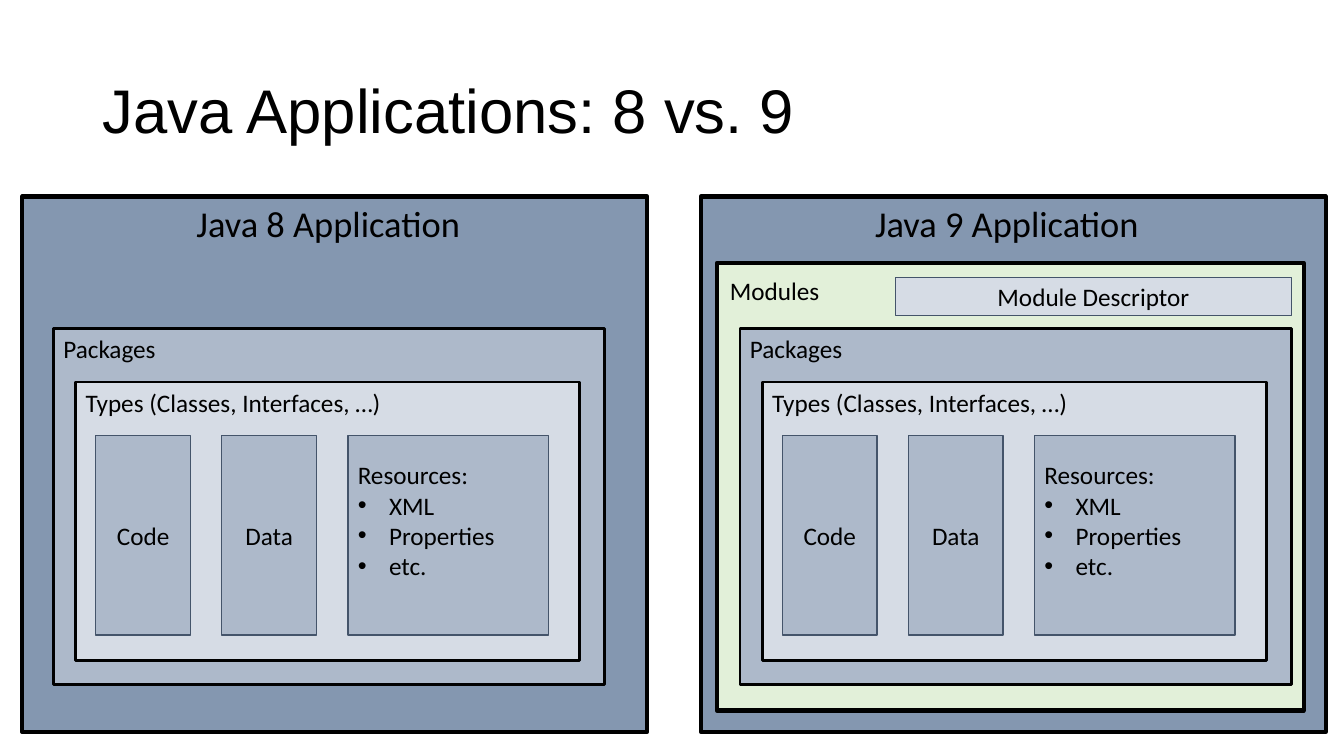
from collections import namedtuple
from dataclasses import dataclass

from lxml.etree import SubElement
from pptx import Presentation
from pptx.dml.color import RGBColor
from pptx.enum.shapes import MSO_SHAPE
from pptx.enum.text import MSO_ANCHOR, MSO_AUTO_SIZE, PP_ALIGN
from pptx.oxml.ns import qn
from pptx.util import Inches, Pt


@dataclass(frozen=True)
class Theme:
    """Colours, fonts and type sizes of the slide."""
    black: str = "000000"
    edge: str = "44546A"
    dark: str = "8497B0"
    medium: str = "ADB9CA"
    light: str = "D6DCE5"
    green: str = "E2F0D9"
    title_font: str = "Arial"
    body_font: str = "Calibri"
    title_size: int = 44
    heading_size: int = 26
    body_size: int = 18


THEME = Theme()
Box = namedtuple("Box", "left top width height")


def inside(box, left, top, width, height):
    """Return a box offset from the corner of another box."""
    return Box(box.left + left, box.top + top, width, height)


def lengths(box):
    """Return the four sides of a box as slide lengths."""
    return [Inches(value) for value in box]


def write(para, text, size=THEME.body_size, font=THEME.body_font,
          align=PP_ALIGN.LEFT, bullet=False):
    """Write one formatted paragraph."""
    para.alignment = align
    span = para.add_run()
    span.text = text
    span.font.size = Pt(size)
    span.font.name = font
    span.font.color.rgb = RGBColor.from_string(THEME.black)
    if bullet:
        properties = para._p.get_or_add_pPr()
        properties.set("marL", str(Inches(0.31)))
        properties.set("indent", str(-Inches(0.31)))
        SubElement(properties, qn("a:buFont"), typeface="Arial")
        SubElement(properties, qn("a:buChar"), char="•")


def add_panel(group, box, fill, line=THEME.black, weight=2):
    """Draw a filled, outlined rectangle."""
    panel = group.shapes.add_shape(MSO_SHAPE.RECTANGLE, *lengths(box))
    panel.shadow.inherit = False
    panel.fill.solid()
    panel.fill.fore_color.rgb = RGBColor.from_string(fill)
    panel.line.color.rgb = RGBColor.from_string(line)
    panel.line.width = Pt(weight)
    return panel


def add_label(group, box, text, **style):
    """Place a one-line label that does not wrap."""
    frame = group.shapes.add_textbox(*lengths(box)).text_frame
    frame.word_wrap = False
    frame.auto_size = MSO_AUTO_SIZE.SHAPE_TO_FIT_TEXT
    write(frame.paragraphs[0], text, **style)


def add_tile(group, box, text, fill=THEME.medium, align=PP_ALIGN.CENTER, items=()):
    """Draw a thin-edged tile with text and an optional bullet list."""
    frame = add_panel(group, box, fill, THEME.edge, 1).text_frame
    frame.word_wrap = True
    frame.vertical_anchor = MSO_ANCHOR.MIDDLE
    write(frame.paragraphs[0], text, align=align)
    for item in items:
        write(frame.add_paragraph(), item, bullet=True)
    if items:
        frame.margin_bottom = Inches(0.35)


def add_title(page, box, text):
    """Move and fill the title placeholder."""
    title = page.shapes.title
    title.left, title.top, title.width, title.height = lengths(box)
    frame = title.text_frame
    frame.auto_size = MSO_AUTO_SIZE.NONE
    frame.word_wrap = True
    frame.vertical_anchor = MSO_ANCHOR.MIDDLE
    para = frame.paragraphs[0]
    para.line_spacing = 0.9
    write(para, text, THEME.title_size, THEME.title_font)


def add_packages(group, box):
    """Draw the packages panel with its types and tiles."""
    add_panel(group, box, THEME.medium)
    add_label(group, inside(box, 0, 0, 1.13, 0.4), "Packages")
    types = inside(box, 0.22, 0.53, 5, 2.76)
    add_panel(group, types, THEME.light)
    add_label(group, inside(types, 0, 0, 3.16, 0.4), "Types (Classes, Interfaces, …)")
    for column, name in enumerate(("Code", "Data")):
        add_tile(group, inside(types, 0.2 + 1.25 * column, 0.53, 0.94, 1.98), name)
    add_tile(group, inside(types, 2.7, 0.53, 1.99, 1.98), "Resources:",
             align=PP_ALIGN.LEFT, items=("XML", "Properties", "etc."))


def add_module_frame(group, box):
    """Draw the modules panel with its descriptor."""
    add_panel(group, box, THEME.green, weight=3)
    add_label(group, inside(box, 0.03, 0.07, 1.1, 0.4), "Modules")
    add_tile(group, inside(box, 1.77, 0.14, 3.93, 0.38), "Module Descriptor", THEME.light)


def add_application(page, box, heading, packages_left, modular=False):
    """Draw one application as a group of nested panels."""
    group = page.shapes.add_group_shape()
    add_panel(group, box, THEME.dark, weight=3)
    if modular:
        add_module_frame(group, inside(box, 0.16, 0.66, 5.82, 4.44))
    add_packages(group, inside(box, packages_left, 1.31, 5.47, 3.53))
    add_label(group, inside(box, 1.63, 0, 2.85, 0.54), heading, size=THEME.heading_size)


def main():
    """Build and save the slide."""
    deck = Presentation()
    deck.slide_width, deck.slide_height = Inches(13.33), Inches(7.5)
    page = deck.slides.add_slide(deck.slide_layouts[5])
    add_title(page, Box(0.92, 0.4, 11.5, 1.45), "Java Applications: 8 vs. 9")
    add_application(page, Box(0.22, 1.95, 6.2, 5.31), "Java 8 Application", 0.31)
    add_application(page, Box(6.95, 1.95, 6.2, 5.31), "Java 9 Application", 0.39, modular=True)
    deck.save("out.pptx")


if __name__ == "__main__":
    main()
